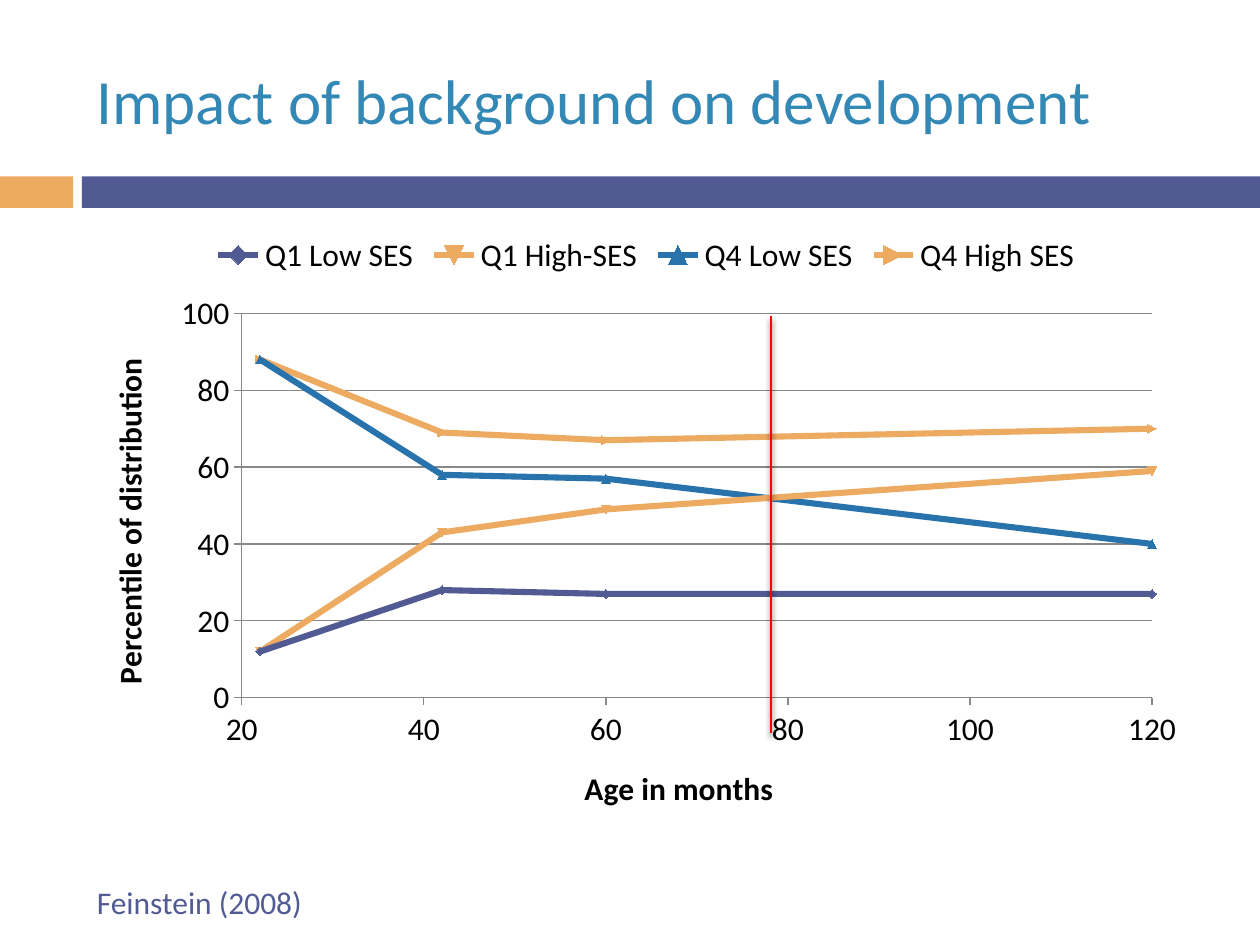
from lxml import etree
from pptx import Presentation, util as u
from pptx.chart import data
from pptx.dml import color
from pptx.enum import chart as ch, shapes, text
from pptx.oxml import ns, parse_xml

AGES = 22, 42, 60, 120
SERIES = [
    ("Q1 Low SES", (12, 28, 27, 27), "525A93", ch.XL_MARKER_STYLE.DIAMOND),
    ("Q1 High-SES", (12, 43, 49, 59), "EDAA61", None),
    ("Q4 Low SES", (88, 58, 57, 40), "2973AC", ch.XL_MARKER_STYLE.TRIANGLE),
    ("Q4 High SES", (88, 69, 67, 70), "EDAA61", ch.XL_MARKER_STYLE.DOT),
]


def rgb(code):
    return color.RGBColor.from_string(code)


def paint(fill, code):
    fill.solid()
    fill.fore_color.rgb = rgb(code)


class Deck:
    """Holds the style and the current slide."""

    font = "Calibri"
    navy, sand, blue, red = "525A93", "EDAA61", "3488B6", "FF0000"
    black, grey = "000000", "888888"

    def __init__(self, slide):
        self.slide = slide

    def run(self, frame, words, size, code, bold=False):
        run = frame.paragraphs[0].add_run()
        run.text = words
        run.font.name, run.font.size, run.font.bold = self.font, u.Pt(size), bold
        run.font.color.rgb = rgb(code)

    def bar(self, box, code):
        bar = self.slide.shapes.add_shape(shapes.MSO_SHAPE.RECTANGLE, *map(u.Inches, box))
        bar.shadow.inherit = False
        paint(bar.fill, code)
        bar.line.fill.background()

    def label(self, box, words, size, code, anchor=text.MSO_ANCHOR.TOP):
        frame = self.slide.shapes.add_textbox(*map(u.Inches, box)).text_frame
        frame.word_wrap = True
        frame.vertical_anchor = anchor
        self.run(frame, words, size, code)

    def axis(self, axis, title, low, top):
        self.run(axis.axis_title.text_frame, title, 18, self.black, True)
        axis.minimum_scale, axis.maximum_scale, axis.major_unit = low, top, 20
        axis.major_tick_mark = ch.XL_TICK_MARK.OUTSIDE
        axis.minor_tick_mark = ch.XL_TICK_MARK.NONE
        axis.format.line.color.rgb = rgb(self.grey)

    def chart(self, box, inner):
        table = data.XyChartData()
        for name, vals, _, _ in SERIES:
            row = table.add_series(name)
            for age, val in zip(AGES, vals):
                row.add_data_point(age, val)
        chart = self.slide.shapes.add_chart(
            ch.XL_CHART_TYPE.XY_SCATTER_LINES, *map(u.Inches, box), table).chart
        chart.has_title = False
        chart.font.name, chart.font.size = self.font, u.Pt(18)
        chart.font.color.rgb = rgb(self.black)
        chart.has_legend = True
        chart.legend.position = ch.XL_LEGEND_POSITION.TOP
        chart.legend.include_in_layout = False
        ages, ranks = chart.category_axis, chart.value_axis
        self.axis(ages, "Age in months", 20, 120)
        self.axis(ranks, "Percentile of distribution", 0, 100)
        ages.has_major_gridlines = False
        ranks.has_major_gridlines = True
        ranks.major_gridlines.format.line.color.rgb = rgb(self.grey)
        plot = chart.plots[0]
        plot.vary_by_categories = False
        for row, (_, _, code, style) in zip(plot.series, SERIES):
            self.curve(row, code, style)
        self.place(chart, inner)

    def curve(self, row, code, style):
        row.smooth = False
        row.format.line.color.rgb = rgb(code)
        row.format.line.width = u.Pt(3.5)
        if style is not None:
            row.marker.style = style
        row.marker.size = 5
        paint(row.marker.format.fill, code)
        row.marker.format.line.color.rgb = rgb(code)

    def place(self, chart, inner):
        area = chart.plots[0]._element.getparent()
        for old in area.findall(ns.qn("c:layout")):
            area.remove(old)
        layout = etree.Element(ns.qn("c:layout"))
        manual = etree.SubElement(layout, ns.qn("c:manualLayout"))
        rules = [("layoutTarget", "inner"), ("xMode", "edge"), ("yMode", "edge")]
        for tag, val in rules + list(zip("xywh", inner)):
            etree.SubElement(manual, ns.qn("c:" + tag)).set("val", str(val))
        area.insert(0, layout)

    def line(self, ends, code, width):
        line = self.slide.shapes.add_connector(
            shapes.MSO_CONNECTOR.STRAIGHT, *map(u.Inches, ends))
        line.line.color.rgb = rgb(code)
        line.line.width = u.Pt(width)
        line._element.spPr.append(parse_xml(
            f'<a:effectLst {ns.nsdecls("a")}><a:outerShdw blurRad="38100" dist="30000" '
            'dir="5400000" rotWithShape="0"><a:srgbClr val="000000">'
            '<a:alpha val="45000"/></a:srgbClr></a:outerShdw></a:effectLst>'))


def main():
    show = Presentation()
    show.slide_width, show.slide_height = u.Inches(10), u.Inches(7.5)
    deck = Deck(show.slides.add_slide(show.slide_layouts[6]))
    deck.bar((0, 1.4, 0.58, 0.25), deck.sand)
    deck.bar((0.65, 1.4, 9.35, 0.25), deck.navy)
    deck.label((0.67, 0.25, 8.92, 1.08), "Impact of background on development",
               36, deck.blue, text.MSO_ANCHOR.MIDDLE)
    deck.label((0.67, 6.96, 2.62, 0.4), "Feinstein (2008)", 18, deck.navy)
    deck.chart((0.67, 1.75, 8.92, 4.92), (0.14, 0.15, 0.81, 0.62))
    deck.line((6.12, 2.51, 6.12, 5.82), deck.red, 1.5)
    show.save("out.pptx")


if __name__ == "__main__":
    main()
